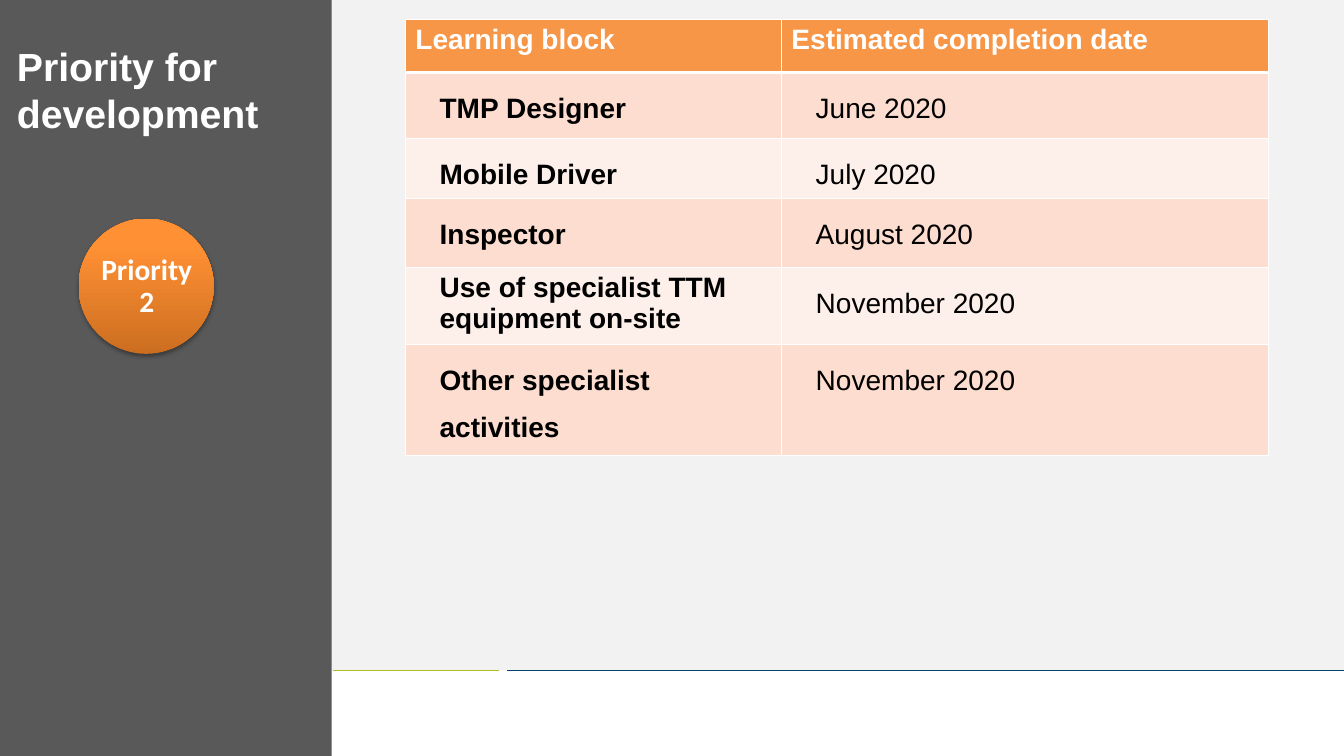
from copy import deepcopy

from pptx import Presentation
from pptx.dml.color import RGBColor
from pptx.enum.shapes import MSO_CONNECTOR, MSO_SHAPE
from pptx.enum.text import MSO_ANCHOR, PP_ALIGN
from pptx.oxml import parse_xml
from pptx.oxml.ns import nsdecls, qn
from pptx.util import Inches, Pt

WHITE = "FFFFFF"
HEADER_FILL = "F79646"
BAND_FILLS = ("FCDDCF", "FDEFE9")
COLUMN_WIDTHS = (3.73, 4.83)
ROW_HEIGHTS = (0.53, 0.65, 0.56, 0.68, 0.72, 1.03)
HEADINGS = ("Learning block", "Estimated completion date")
BLOCKS = (
    ("TMP Designer", "June 2020"),
    ("Mobile Driver", "July 2020"),
    ("Inspector", "August 2020"),
    ("Use of specialist TTM equipment on-site", "November 2020"),
    ("Other specialist activities", "November 2020"),
)
SINGLE_SPACED = BLOCKS[3][0]
BADGE_STOPS = ((0, "CC6E20"), (0.8, "FF9034"), (1, "FF9136"))


def rgb(value):
    return RGBColor.from_string(value)


def apply(target, values):
    for attribute, value in values.items():
        setattr(target, attribute, value)


def write(frame, text, color, font, paragraph_format=None):
    paragraph = frame.paragraphs[0]
    run = paragraph.add_run()
    run.text = text
    apply(run.font, font)
    run.font.color.rgb = rgb(color)
    apply(paragraph, paragraph_format or {})
    return paragraph


def add_panel(slide, bounds, color, kind=MSO_SHAPE.RECTANGLE):
    panel = slide.shapes.add_shape(kind, *map(Inches, bounds))
    panel.shadow.inherit = False
    panel.fill.solid()
    panel.fill.fore_color.rgb = rgb(color)
    panel.line.fill.background()
    return panel


def add_rule(slide, left, right, color):
    height = Inches(6.65)
    rule = slide.shapes.add_connector(
        MSO_CONNECTOR.STRAIGHT, Inches(left), height, Inches(right), height
    )
    rule.line.color.rgb = rgb(color)
    rule.line.width = Pt(0.75)
    rule.element.spPr.append(parse_xml(f"<a:effectLst {nsdecls('a')}/>"))


def add_label(slide, bounds, text, font, frame_format, paragraph_format=None):
    label = slide.shapes.add_textbox(*map(Inches, bounds))
    apply(label.text_frame, {"word_wrap": True, **frame_format})
    write(label.text_frame, text, WHITE, font, paragraph_format)


def add_badge(slide, bounds):
    badge = add_panel(slide, bounds, HEADER_FILL, MSO_SHAPE.OVAL)
    badge.fill.gradient()
    badge.fill.gradient_angle = 90
    properties = badge.element.spPr
    stop_list = next(properties.iter(qn("a:gsLst")))
    stop_list.append(deepcopy(stop_list[-1]))
    for stop, (position, color) in zip(badge.fill.gradient_stops, BADGE_STOPS):
        stop.position = position
        stop.color.rgb = rgb(color)
    properties.find(qn("a:effectLst")).append(parse_xml(
        f'<a:outerShdw {nsdecls("a")} blurRad="{Pt(3.1)}" dist="{Pt(1.8)}" '
        'dir="5400000" rotWithShape="0"><a:srgbClr val="000000">'
        '<a:alpha val="35000"/></a:srgbClr></a:outerShdw>'
    ))


def set_borders(cell, widths):
    for side, width in widths.items():
        cell._tc.get_or_add_tcPr().append(parse_xml(
            f'<a:ln{side} {nsdecls("a")} w="{Pt(width)}"><a:solidFill>'
            f'<a:srgbClr val="{WHITE}"/></a:solidFill></a:ln{side}>'
        ))


def fill_cell(cell, row, column, text):
    header = row == 0
    set_borders(cell, {"L": 1, "R": 1, "T": 3 if row == 1 else 1, "B": 3 if header else 1})
    cell.fill.solid()
    cell.fill.fore_color.rgb = rgb(HEADER_FILL if header else BAND_FILLS[(row - 1) % 2])
    font = {"name": "Arial", "size": Pt(20), "bold": header or column == 0}
    paragraph = write(cell.text_frame, text, WHITE if header else "000000", font)
    if not header:
        paragraph.line_spacing = 1.0 if text == SINGLE_SPACED else 1.5
        indent = paragraph._p.get_or_add_pPr()
        indent.set("marL", str(Inches(0.24)))
        indent.set("indent", "0")


def add_schedule(slide, left, top):
    schedule = slide.shapes.add_table(
        len(ROW_HEIGHTS), len(COLUMN_WIDTHS), Inches(left), Inches(top),
        Inches(sum(COLUMN_WIDTHS)), Inches(sum(ROW_HEIGHTS))
    ).table
    for column, width in zip(schedule.columns, COLUMN_WIDTHS):
        column.width = Inches(width)
    for row, height in zip(schedule.rows, ROW_HEIGHTS):
        row.height = Inches(height)
    for row, texts in enumerate((HEADINGS, *BLOCKS)):
        for column, text in enumerate(texts):
            fill_cell(schedule.cell(row, column), row, column, text)


def main():
    deck = Presentation()
    apply(deck, {"slide_width": Inches(13.33), "slide_height": Inches(7.5)})
    slide = deck.slides.add_slide(deck.slide_layouts[6])

    add_panel(slide, (3, 0, 10.33, 6.65), "F2F2F2")
    add_panel(slide, (0, 0, 3.29, 7.5), "595959")
    add_rule(slide, 3.3, 4.95, "AFBD21")
    add_rule(slide, 5.03, 13.33, "00456A")
    add_label(
        slide, (0.07, 0.37, 3.16, 6.31), "Priority for development",
        {"name": "Arial", "size": Pt(28), "bold": True},
        {"vertical_anchor": MSO_ANCHOR.TOP},
    )
    add_schedule(slide, 4.02, 0.19)
    add_badge(slide, (0.78, 2.17, 1.34, 1.34))
    margins = ("margin_left", "margin_top", "margin_right", "margin_bottom")
    add_label(
        slide, (0.98, 2.37, 0.95, 0.95), "Priority 2",
        {"name": "Calibri", "size": Pt(21), "bold": True},
        {"vertical_anchor": MSO_ANCHOR.MIDDLE, **dict.fromkeys(margins, Inches(0.01))},
        {"alignment": PP_ALIGN.CENTER, "line_spacing": 0.9},
    )
    deck.save("out.pptx")


if __name__ == "__main__":
    main()
